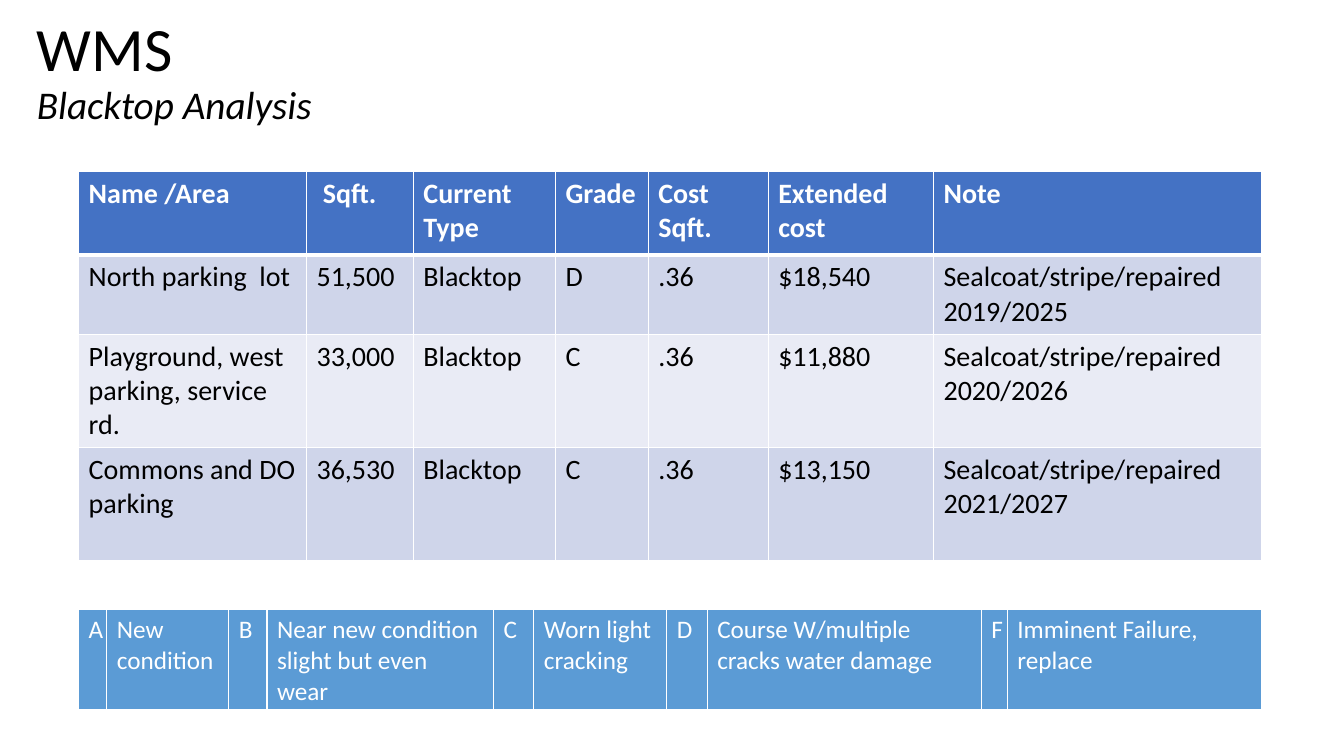
from dataclasses import dataclass

from lxml import etree
from pptx import Presentation, util as u
from pptx.dml.color import RGBColor
from pptx.enum import text as t
from pptx.oxml import ns

WIDE, HIGH = u.Inches(13.33), u.Inches(7.5)
FONT = "Calibri"
HUES = {"white": "FFFFFF", "black": "000000", "head": "4472C4",
        "odd": "CFD5EA", "even": "E9EBF5", "key": "5B9BD5"}


@dataclass(frozen=True)
class Row:
    share: float  # of the slide's height, in percent
    fill: str
    color: str
    cells: tuple[str, ...]
    bold: bool = False
    rule: int = 1  # bottom border, in points


@dataclass(frozen=True)
class Grid:
    top: float  # of the slide's height, in percent
    size: int
    cols: tuple[float, ...]  # relative widths
    rows: tuple[Row, ...]
    left: float = 5.85  # of the slide's width, in percent
    width: float = 88.0


AREAS = Grid(22.67, 20, (2.26, 1.06, 1.41, 0.92, 1.19, 1.64, 3.25), (
    Row(11.07, "head", "white",
        ("Name /Area", " Sqft.", "Current\nType", "Grade", "Cost Sqft.",
         "Extended\ncost", "Note"), bold=True, rule=3),
    Row(10.53, "odd", "black",
        ("North parking  lot", "51,500", "Blacktop", "D", ".36", "$18,540",
         "Sealcoat/stripe/repaired 2019/2025")),
    Row(14.93, "even", "black",
        ("Playground, west parking, service rd.", "33,000", "Blacktop", "C",
         ".36", "$11,880", "Sealcoat/stripe/repaired 2020/2026")),
    Row(14.93, "odd", "black",
        ("Commons and DO\nparking", "36,530", "Blacktop", "C", ".36",
         "$13,150", "Sealcoat/stripe/repaired 2021/2027")),
))
GRADES = Grid(
    80.67, 18,
    (0.28, 1.21, 0.38, 2.25, 0.4, 1.32, 0.4, 2.72, 0.26, 2.52), (
        Row(13.33, "key", "white",
            ("A", "New condition",
             "B", "Near new condition slight but even wear",
             "C", "Worn light cracking",
             "D", "Course W/multiple cracks water damage",
             "F", "Imminent Failure, replace"), rule=3),
    ))


def across(share: float) -> int:
    return round(WIDE * share / 100)


def down(share: float) -> int:
    return round(HIGH * share / 100)


def write(para, words: str, *, size: int, color: str = "black",
          bold: bool = False, italic: bool = False) -> None:
    run = para.add_run()
    run.text = words
    font = run.font
    font.name, font.size = FONT, u.Pt(size)
    font.bold, font.italic = bold, italic
    font.color.rgb = RGBColor.from_string(HUES[color])


def edge(cell, side: str, points: int) -> None:
    """Add a white border; sides go in the order L, R, T, B, before the fill."""
    props = cell._tc.get_or_add_tcPr()
    line = etree.SubElement(props, ns.qn(f"a:ln{side}"), w=str(u.Pt(points)))
    solid = etree.SubElement(line, ns.qn("a:solidFill"))
    etree.SubElement(solid, ns.qn("a:srgbClr"), val=HUES["white"])


def draw(slide, grid: Grid) -> None:
    tall = down(sum(row.share for row in grid.rows))
    table = slide.shapes.add_table(
        len(grid.rows), len(grid.cols), across(grid.left), down(grid.top),
        across(grid.width), tall).table
    table.first_row = table.horz_banding = False
    for col, part in zip(table.columns, grid.cols):
        col.width = across(grid.width * part / sum(grid.cols))
    above = 1
    for i, row in enumerate(grid.rows):
        table.rows[i].height = down(row.share)
        for j, words in enumerate(row.cells):
            cell = table.cell(i, j)
            for side, points in zip("LRTB", (1, 1, above, row.rule)):
                edge(cell, side, points)
            cell.fill.solid()
            cell.fill.fore_color.rgb = RGBColor.from_string(HUES[row.fill])
            frame = cell.text_frame
            for k, line in enumerate(words.split("\n")):
                para = frame.add_paragraph() if k else frame.paragraphs[0]
                write(para, line, size=grid.size, color=row.color,
                      bold=row.bold)
        above = row.rule


def title(slide) -> None:
    box = slide.shapes.add_textbox(across(2), 0, across(86.3), down(19.33))
    frame = box.text_frame
    frame.word_wrap = True
    frame.vertical_anchor = t.MSO_ANCHOR.MIDDLE
    para = frame.paragraphs[0]
    para.line_spacing = 0.9
    write(para, "WMS", size=44)
    para.add_line_break()
    write(para, "Blacktop Analysis", size=28, italic=True)


def main() -> None:
    deck = Presentation()
    deck.slide_width, deck.slide_height = WIDE, HIGH
    slide = deck.slides.add_slide(deck.slide_layouts[6])
    title(slide)
    for grid in (AREAS, GRADES):
        draw(slide, grid)
    deck.save("out.pptx")


if __name__ == "__main__":
    main()
